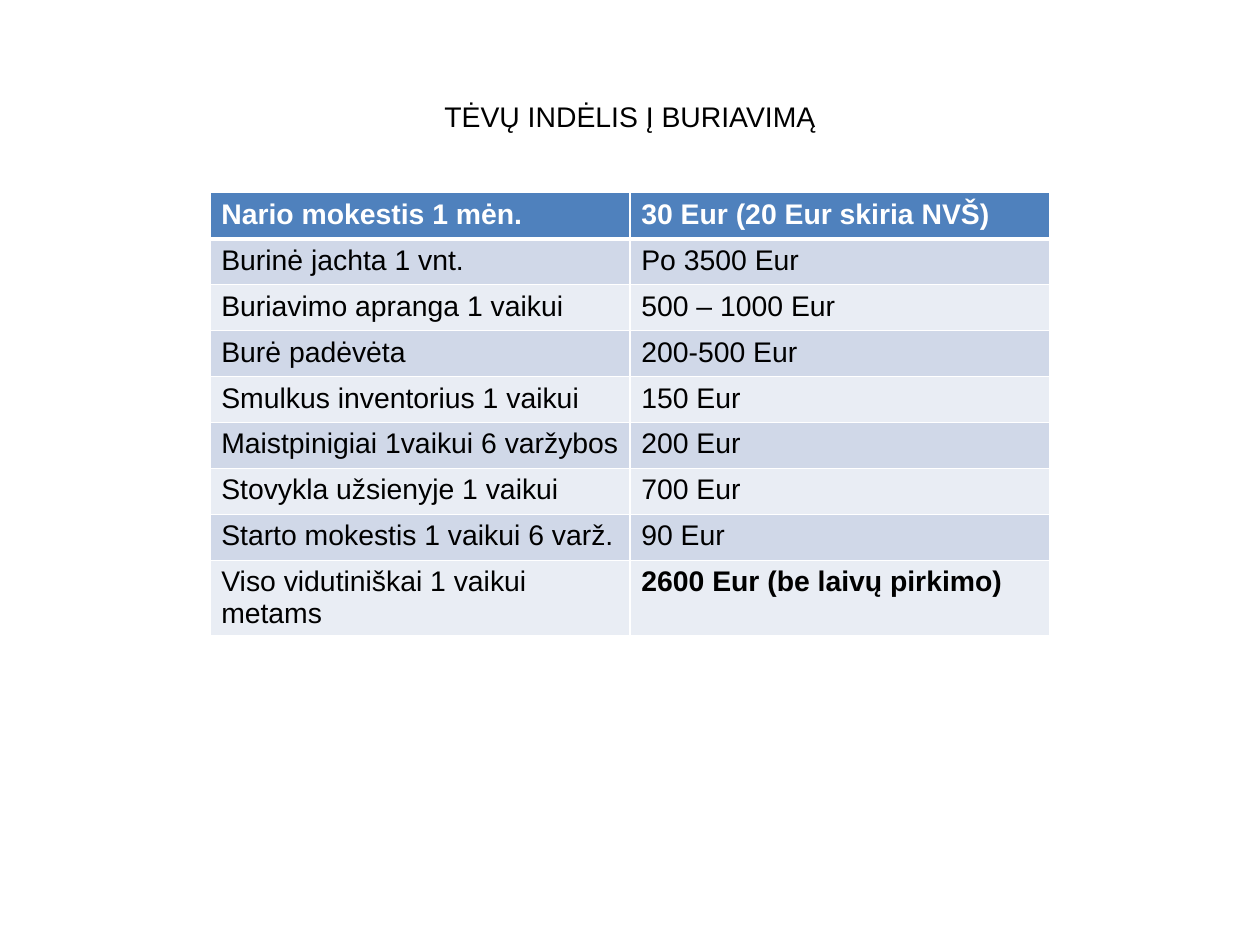
import pptx
import pptx.dml.color
import pptx.enum.text
import pptx.oxml.ns
import pptx.util
import lxml.etree

COLORS = {
    "header": "4F81BD",
    "odd": "D0D8E8",
    "even": "E9EDF4",
    "white": "FFFFFF",
    "black": "000000",
}
COSTS = [
    ("Nario mokestis 1 mėn.", "30 Eur (20 Eur skiria NVŠ)"),
    ("Burinė jachta 1 vnt.", "Po 3500 Eur"),
    ("Buriavimo apranga 1 vaikui", "500 – 1000 Eur"),
    ("Burė padėvėta", "200-500 Eur"),
    ("Smulkus inventorius 1 vaikui", "150 Eur"),
    ("Maistpinigiai 1vaikui 6 varžybos", "200 Eur"),
    ("Stovykla užsienyje 1 vaikui", "700 Eur"),
    ("Starto mokestis 1 vaikui 6 varž.", "90 Eur"),
    ("Viso vidutiniškai 1 vaikui metams", "2600 Eur (be laivų pirkimo)"),
]
COLUMN_WIDTH = pptx.util.Pt(266.7)
ROW_HEIGHT = pptx.util.Pt(29.2)


def write_text(text_frame, text, color="black", bold=False, align="LEFT"):
    paragraph = text_frame.paragraphs[0]
    paragraph.alignment = pptx.enum.text.PP_ALIGN[align]
    run = paragraph.add_run()
    run.text = text
    run.font.name = "Arial"
    run.font.size = pptx.util.Pt(18)
    run.font.bold = bold
    run.font.color.rgb = pptx.dml.color.RGBColor.from_string(COLORS[color])


def add_borders(cell, bottom_width):
    properties = cell._tc.get_or_add_tcPr()
    widths = {"lnL": 1, "lnR": 1, "lnT": 1, "lnB": bottom_width}
    for position, (side, width) in enumerate(widths.items()):
        line = lxml.etree.Element(pptx.oxml.ns.qn("a:" + side), w=str(pptx.util.Pt(width)))
        fill = lxml.etree.SubElement(line, pptx.oxml.ns.qn("a:solidFill"))
        lxml.etree.SubElement(fill, pptx.oxml.ns.qn("a:srgbClr"), val=COLORS["white"])
        properties.insert(position, line)


presentation = pptx.Presentation()
presentation.slide_width = pptx.util.Pt(800)
presentation.slide_height = pptx.util.Pt(600.13)
slide = presentation.slides.add_slide(presentation.slide_layouts[5])

title = slide.shapes.title
title.width = int(presentation.slide_width * 0.9)
title.height = presentation.slide_height // 6
title.left = (presentation.slide_width - title.width) // 2
title.top = int(presentation.slide_height * 0.04)
title_frame = title.text_frame
title_frame.margin_left = title_frame.margin_right = 0
title_frame.margin_top = title_frame.margin_bottom = 0
title_frame.vertical_anchor = pptx.enum.text.MSO_ANCHOR.MIDDLE
write_text(title_frame, "TĖVŲ INDĖLIS Į BURIAVIMĄ", align="CENTER")

column_count = len(COSTS[0])
table_width = COLUMN_WIDTH * column_count
table = slide.shapes.add_table(
    len(COSTS),
    column_count,
    (presentation.slide_width - table_width) // 2,
    pptx.util.Inches(1.7),
    table_width,
    ROW_HEIGHT * len(COSTS),
).table

for row_index, row_texts in enumerate(COSTS):
    is_header = row_index == 0
    is_total = row_index == len(COSTS) - 1
    fill_name = "header" if is_header else "odd" if row_index % 2 else "even"
    for column_index, text in enumerate(row_texts):
        cell = table.cell(row_index, column_index)
        cell.margin_left = pptx.util.Inches(0.1)
        cell.margin_right = pptx.util.Inches(0.09)
        cell.fill.solid()
        cell.fill.fore_color.rgb = pptx.dml.color.RGBColor.from_string(COLORS[fill_name])
        add_borders(cell, 3 if is_header else 1)
        write_text(
            cell.text_frame,
            text,
            color="white" if is_header else "black",
            bold=is_header or (is_total and column_index == 1),
        )

presentation.save("out.pptx")
